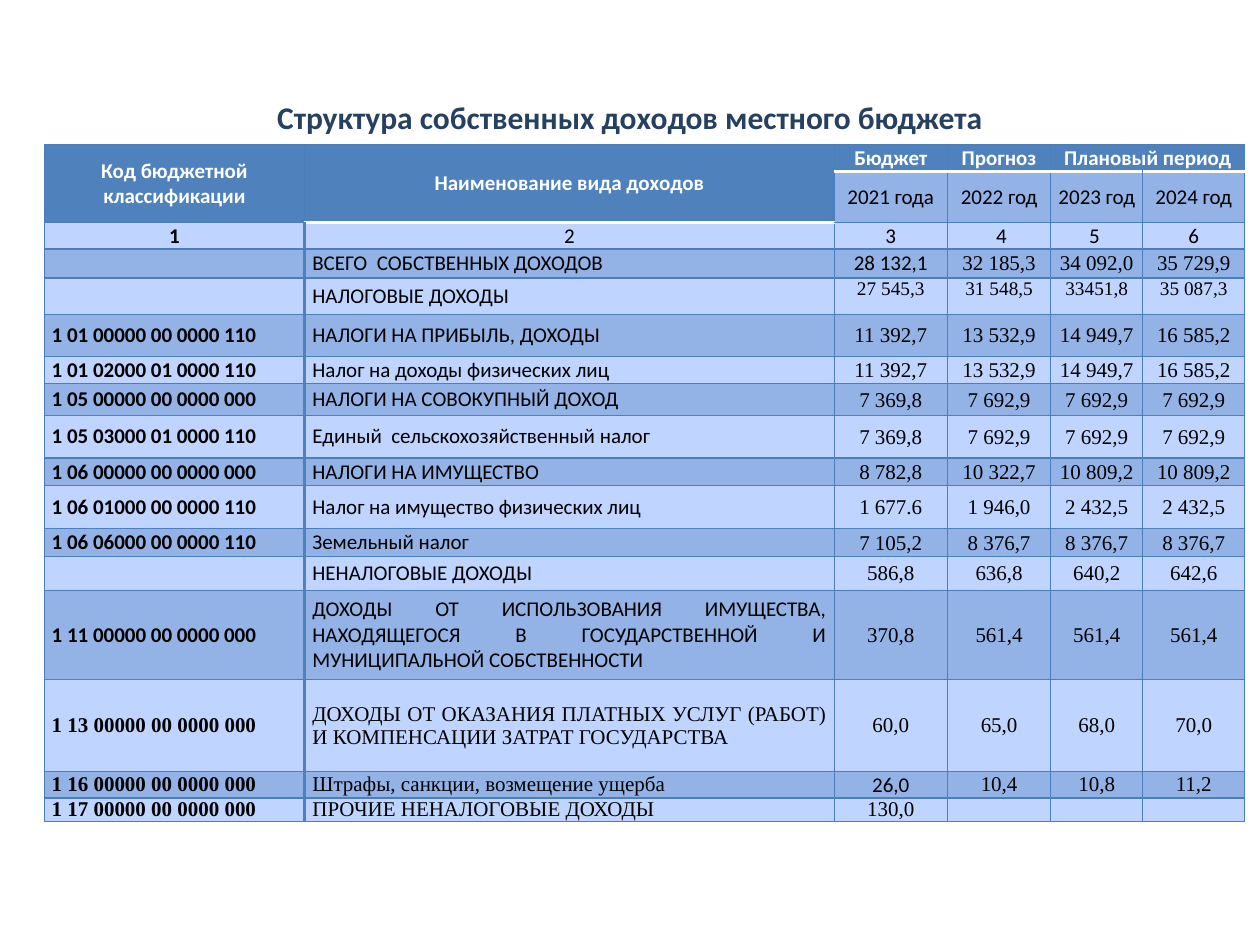
import pptx
import pptx.dml.color
import pptx.enum.text
import pptx.oxml.ns
import pptx.util
from lxml import etree

Inches = pptx.util.Inches
Pt = pptx.util.Pt
Align = pptx.enum.text.PP_ALIGN
Anchor = pptx.enum.text.MSO_ANCHOR

COLORS = {
    "title": "254061",
    "header": "4F81BD",
    "dark_band": "93B2E5",
    "light_band": "BFD4FF",
    "grid": "4B7EBC",
    "white": "FFFFFF",
    "text": "000000",
}
SANS, SERIF = "Calibri", "Times New Roman"
COLUMNS = [2.07, 4.2, 0.9, 0.82, 0.73, 0.81]
ROW_HEIGHTS = [0.21, 0.4, 0.21, 0.23, 0.29, 0.33, 0.22, 0.25, 0.34,
               0.22, 0.34, 0.22, 0.27, 0.71, 0.73, 0.21, 0.18]
NUMBER_ROW, TOTAL_ROW, TAX_ROW = 2, 3, 4
FIRST_SERIF_ROW = 14
SANS_VALUES = {(TOTAL_ROW, 2), (15, 2)}

ROWS = [
    ["Код бюджетной классификации", "Наименование вида доходов",
     "Бюджет", "Прогноз", "Плановый период", ""],
    ["", "", "2021 года", "2022 год", "2023 год", "2024 год"],
    ["1", "2", "3", " 4", "5 ", "6"],
    ["", "ВСЕГО  СОБСТВЕННЫХ ДОХОДОВ", "28 132,1", "32 185,3", "34 092,0", "35 729,9"],
    ["", "НАЛОГОВЫЕ ДОХОДЫ", "27 545,3", "31 548,5", "33451,8", "35 087,3"],
    ["1 01 00000 00 0000 110", "НАЛОГИ НА ПРИБЫЛЬ, ДОХОДЫ",
     "11 392,7", "13 532,9", "14 949,7", "16 585,2"],
    ["1 01 02000 01 0000 110", "Налог на доходы физических лиц",
     "11 392,7", "13 532,9", "14 949,7", "16 585,2"],
    ["1 05 00000 00 0000 000", "НАЛОГИ НА СОВОКУПНЫЙ ДОХОД",
     "7 369,8", "7 692,9", "7 692,9", "7 692,9"],
    ["1 05 03000 01 0000 110", "Единый  сельскохозяйственный налог",
     "7 369,8", "7 692,9", "7 692,9", "7 692,9"],
    ["1 06 00000 00 0000 000", "НАЛОГИ НА ИМУЩЕСТВО",
     "8 782,8", "10 322,7", "10 809,2", "10 809,2"],
    ["1 06 01000 00 0000 110", "Налог на имущество физических лиц",
     "1 677.6", "1 946,0", "2 432,5", "2 432,5"],
    ["1 06 06000 00 0000 110", "Земельный налог",
     "7 105,2", "8 376,7", "8 376,7", "8 376,7"],
    ["", "НЕНАЛОГОВЫЕ ДОХОДЫ", "586,8", "636,8", "640,2", "642,6"],
    ["1 11 00000 00 0000 000",
     "ДОХОДЫ ОТ ИСПОЛЬЗОВАНИЯ ИМУЩЕСТВА, НАХОДЯЩЕГОСЯ В ГОСУДАРСТВЕННОЙ "
     "И МУНИЦИПАЛЬНОЙ СОБСТВЕННОСТИ", "370,8", "561,4", "561,4", "561,4"],
    ["1 13 00000 00 0000 000",
     "ДОХОДЫ ОТ ОКАЗАНИЯ ПЛАТНЫХ УСЛУГ (РАБОТ) И КОМПЕНСАЦИИ ЗАТРАТ ГОСУДАРСТВА",
     "60,0", "65,0", "68,0", "70,0"],
    ["1 16 00000 00 0000 000", "Штрафы, санкции, возмещение ущерба",
     "26,0", "10,4", "10,8", "11,2"],
    ["1 17 00000 00 0000 000", "ПРОЧИЕ НЕНАЛОГОВЫЕ ДОХОДЫ", "130,0", "", "", ""],
]


def rgb(name):
    return pptx.dml.color.RGBColor.from_string(COLORS[name])


def style_font(para, size, face, color, bold):
    para.font.size = Pt(size)
    para.font.name = face
    para.font.bold = bold
    para.font.color.rgb = rgb(color)


def add_title(slide):
    title = slide.shapes.title
    title.left, title.top = Inches(0.5), Inches(0.3)
    title.width, title.height = Inches(9), Inches(1.25)
    title.text_frame.text = "Структура собственных доходов местного бюджета"
    title.text_frame.vertical_anchor = Anchor.MIDDLE
    para = title.text_frame.paragraphs[0]
    para.alignment = Align.CENTER
    style_font(para, 18, SANS, "title", True)


def is_header(row, column):
    return row == 0 or (row == 1 and column < 2)


def has_white_bottom(row, column):
    return (row == 0 and column > 0) or (row == 1 and column == 1)


def set_borders(cell, row, column):
    edges = {side: ("grid", 0.75) for side in "LRTB"}
    if row >= NUMBER_ROW and column < 2:
        edges["R" if column == 0 else "L"] = ("header", 2)
    if has_white_bottom(row, column):
        edges["B"] = ("white", 2)
    above_is_merged = row == 1 and column < 2
    if has_white_bottom(row - 1, column) and not above_is_merged:
        edges["T"] = ("white", 2)
    properties = cell._tc.get_or_add_tcPr()
    for index, (side, (color, width)) in enumerate(edges.items()):
        line = etree.Element(pptx.oxml.ns.qn(f"a:ln{side}"), w=str(Pt(width)))
        fill = etree.SubElement(line, pptx.oxml.ns.qn("a:solidFill"))
        etree.SubElement(fill, pptx.oxml.ns.qn("a:srgbClr"), val=COLORS[color])
        properties.insert(index, line)


def set_layout(cell, row, column):
    is_value = column >= 2
    side, top = 0.06, 0
    cell.vertical_anchor = Anchor.MIDDLE
    if row == NUMBER_ROW or (row == 0 and column > 2):
        cell.vertical_anchor = Anchor.BOTTOM
    if row == TAX_ROW and is_value:
        side = 0.07
        cell.vertical_anchor = Anchor.TOP
    elif TAX_ROW < row < FIRST_SERIF_ROW and is_value:
        side, top = 0.01, 0.01
    cell.margin_left = cell.margin_right = Inches(side)
    cell.margin_top, cell.margin_bottom = Inches(top), 0


def fill_cell(cell, row, column, text):
    header, is_value = is_header(row, column), column >= 2
    band = "dark_band" if row % 2 else "light_band"
    cell.fill.solid()
    cell.fill.fore_color.rgb = rgb("header" if header else band)
    set_layout(cell, row, column)
    set_borders(cell, row, column)
    cell.text = text
    para = cell.text_frame.paragraphs[0]
    para.alignment = Align.CENTER if is_value or row <= NUMBER_ROW else Align.JUSTIFY
    serif = row >= FIRST_SERIF_ROW or (is_value and row >= TOTAL_ROW)
    face = SERIF if serif and (row, column) not in SANS_VALUES else SANS
    size = 11 if row == TAX_ROW and is_value else 12
    style_font(para, size, face, "white" if header else "text", header or column == 0)
    if not text:
        etree.SubElement(para._p, pptx.oxml.ns.qn("a:endParaRPr"), sz=str(size * 100))


def add_income_table(slide):
    frame = slide.shapes.add_table(
        len(ROWS), len(COLUMNS), Inches(0.35), Inches(1.15),
        Inches(sum(COLUMNS)), Inches(sum(ROW_HEIGHTS)))
    table = frame.table
    table.first_row = table.horz_banding = False
    for column, width in zip(table.columns, COLUMNS):
        column.width = Inches(width)
    for row, height in zip(table.rows, ROW_HEIGHTS):
        row.height = Inches(height)
    for row, texts in enumerate(ROWS):
        for column, text in enumerate(texts):
            fill_cell(table.cell(row, column), row, column, text)
    for start, end in [((0, 0), (1, 0)), ((0, 1), (1, 1)), ((0, 4), (0, 5))]:
        table.cell(*start).merge(table.cell(*end))


def main():
    deck = pptx.Presentation()
    deck.slide_width, deck.slide_height = Inches(10), Inches(7.5)
    slide = deck.slides.add_slide(deck.slide_layouts[5])
    add_title(slide)
    add_income_table(slide)
    deck.save("out.pptx")


if __name__ == "__main__":
    main()
